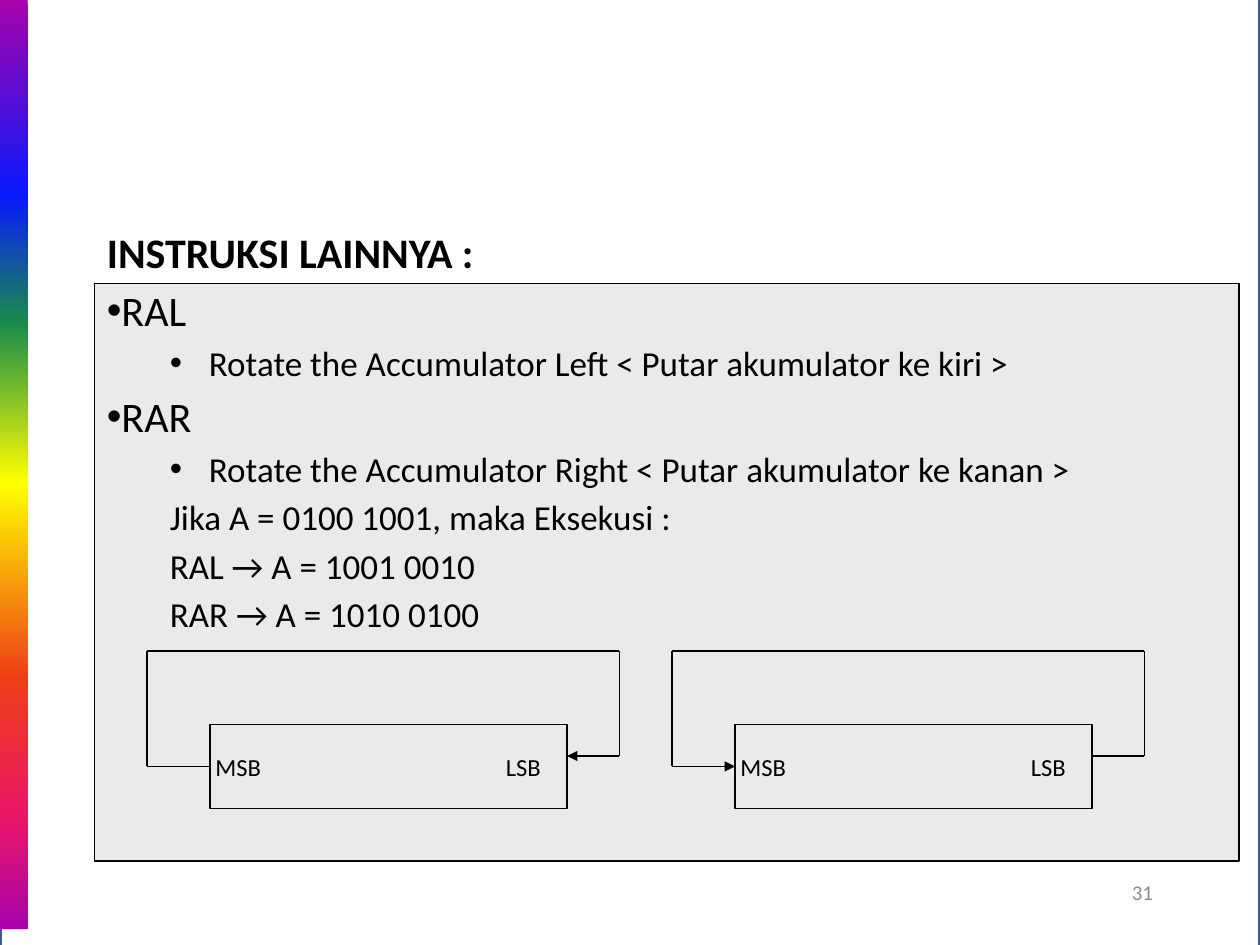
"""Build the slide on the RAL and RAR accumulator rotation instructions."""
from itertools import pairwise

from lxml.etree import SubElement
from pptx import Presentation
from pptx.dml.color import RGBColor
from pptx.enum.shapes import MSO_CONNECTOR, MSO_SHAPE
from pptx.enum.text import MSO_ANCHOR, PP_ALIGN
from pptx.oxml.ns import qn
from pptx.util import Inches, Pt

BLACK = RGBColor(0x00, 0x00, 0x00)
WHITE = RGBColor(0xFF, 0xFF, 0xFF)
PANEL = RGBColor(0xEA, 0xEA, 0xEA)
FRAME = RGBColor(0x3A, 0x5F, 0x8C)
GREY = RGBColor(0x8C, 0x8C, 0x8C)

RAINBOW = [(0, "A603AB"), (21, "0819FB"), (35, "1A8D48"), (52, "FFFF00"),
           (73, "EE3F17"), (88, "E81766"), (100, "A603AB")]

TITLE, HEAD, DETAIL, EXAMPLE = "title", "head", "detail", "example"
STYLES = {
    TITLE: {"size": 24, "bold": True, "bullet": False, "margin": 0, "indent": 0},
    HEAD: {"size": 24, "bold": False, "bullet": True, "margin": 0, "indent": 0},
    DETAIL: {"size": 20, "bold": False, "bullet": True, "margin": 0.81, "indent": -0.31},
    EXAMPLE: {"size": 20, "bold": False, "bullet": False, "margin": 0.81, "indent": -0.31},
}
LINES = [
    (TITLE, "INSTRUKSI LAINNYA :"),
    (HEAD, "RAL"),
    (DETAIL, "Rotate the Accumulator Left < Putar akumulator ke kiri >"),
    (HEAD, "RAR"),
    (DETAIL, "Rotate the Accumulator Right < Putar akumulator ke kanan >"),
    (EXAMPLE, "Jika A = 0100 1001, maka Eksekusi :"),
    (EXAMPLE, "RAL → A = 1001 0010"),
    (EXAMPLE, "RAR → A = 1010 0100"),
]

UNITS_PER_INCH = 12
REGISTER = (20, 69, 34, 8)
BIT_LABELS = [("MSB", 19.33), ("LSB", 47)]
LOOP = [(20, 73), (14, 73), (14, 62), (59, 62), (59, 72), (54, 72)]
ROTATIONS = [(0, 4, "tailEnd"), (50, 0, "headEnd")]


def grid(*units):
    return [Inches(unit / UNITS_PER_INCH) for unit in units]


def add_rectangle(shapes, place, fill, line=None, width=0.75):
    box = shapes.add_shape(MSO_SHAPE.RECTANGLE, *place)
    box.shadow.inherit = False
    if fill is not None:
        box.fill.solid()
        box.fill.fore_color.rgb = fill
    if line is None:
        box.line.fill.background()
    else:
        box.line.color.rgb = line
        box.line.width = Pt(width)
    return box


def add_text_box(shapes, place):
    frame = shapes.add_textbox(*place).text_frame
    frame.word_wrap = True
    return frame


def write(para, text, color=BLACK, **formats):
    span = para.add_run()
    span.text = text
    span.font.color.rgb = color
    for name, value in {"name": "Calibri", **formats}.items():
        setattr(span.font, name, value)


def add_backdrop(page, deck):
    sheet = add_rectangle(page.shapes, (0, Inches(-0.11), deck.slide_width, Inches(7.8)),
                          WHITE, FRAME, 2)
    color = sheet.fill._xPr.find(qn("a:solidFill"))[0]
    SubElement(color, qn("a:alpha"), val="96000")

    strip = add_rectangle(page.shapes, (0, 0, Inches(0.22), Inches(7.37)), None)
    strip.fill.gradient()
    strip.fill.gradient_angle = 270
    stops = strip.fill._xPr.find(qn("a:gradFill")).find(qn("a:gsLst"))
    for stop in list(stops):
        stops.remove(stop)
    for percent, color in RAINBOW:
        stop = SubElement(stops, qn("a:gs"), pos=str(percent * 1000))
        SubElement(stop, qn("a:srgbClr"), val=color)


def add_page_number(page):
    frame = add_text_box(page.shapes, grid(86, 82, 25, 6))
    frame.vertical_anchor = MSO_ANCHOR.MIDDLE
    para = frame.paragraphs[0]
    para.alignment = PP_ALIGN.RIGHT
    write(para, "31", GREY, size=Pt(12))


def add_instructions(page):
    add_rectangle(page.shapes, grid(9, 27, 109, 55), PANEL, BLACK)
    frame = add_text_box(page.shapes, grid(9, 21, 109, 60))
    for index, (kind, text) in enumerate(LINES):
        style = STYLES[kind]
        para = frame.add_paragraph() if index else frame.paragraphs[0]
        para.alignment = PP_ALIGN.JUSTIFY
        properties = para._p.get_or_add_pPr()
        properties.set("marL", str(Inches(style["margin"])))
        properties.set("indent", str(Inches(style["indent"])))
        if style["bullet"]:
            SubElement(properties, qn("a:buFont"), typeface="Arial")
            SubElement(properties, qn("a:buChar"), char="•")
        else:
            SubElement(properties, qn("a:buNone"))
        if index:
            para.space_before = Pt(style["size"] * 0.18)
        write(para, text, size=Pt(style["size"]), bold=style["bold"])


def add_rotation(page, shift, arrow_part, arrow_end):
    group = page.shapes.add_group_shape()
    left, top, width, height = REGISTER
    register = add_rectangle(group.shapes, grid(left + shift, top, width, height), PANEL, BLACK)
    for text, column in BIT_LABELS:
        frame = add_text_box(group.shapes, grid(column + shift, 71, 8, 4))
        write(frame.paragraphs[0], text, size=Pt(14))
    for part, (start, end) in enumerate(pairwise(LOOP)):
        line = group.shapes.add_connector(
            MSO_CONNECTOR.STRAIGHT,
            *grid(start[0] + shift, start[1], end[0] + shift, end[1]))
        line.line.color.rgb = BLACK
        line.line.width = Pt(0.75)
        if part == 0:
            line.begin_connect(register, 1)
        if part == arrow_part:
            SubElement(line.line._get_or_add_ln(), qn(f"a:{arrow_end}"), type="triangle")
        SubElement(line._element.spPr, qn("a:effectLst"))


def main():
    deck = Presentation()
    deck.slide_width, deck.slide_height = Inches(10), Inches(7.5)
    page = deck.slides.add_slide(deck.slide_layouts[6])
    add_backdrop(page, deck)
    add_page_number(page)
    add_instructions(page)
    for rotation in ROTATIONS:
        add_rotation(page, *rotation)
    deck.save("out.pptx")


if __name__ == "__main__":
    main()
